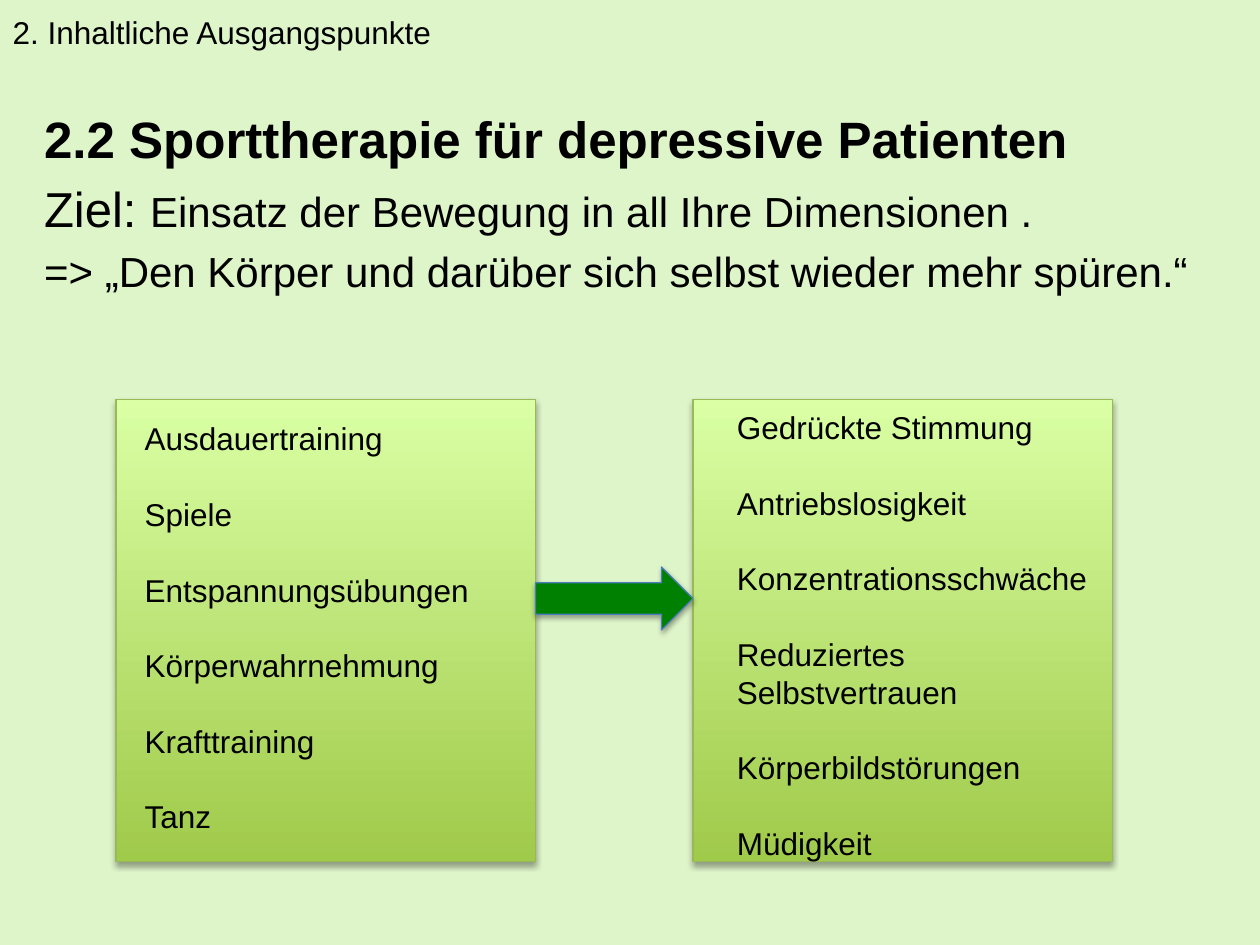
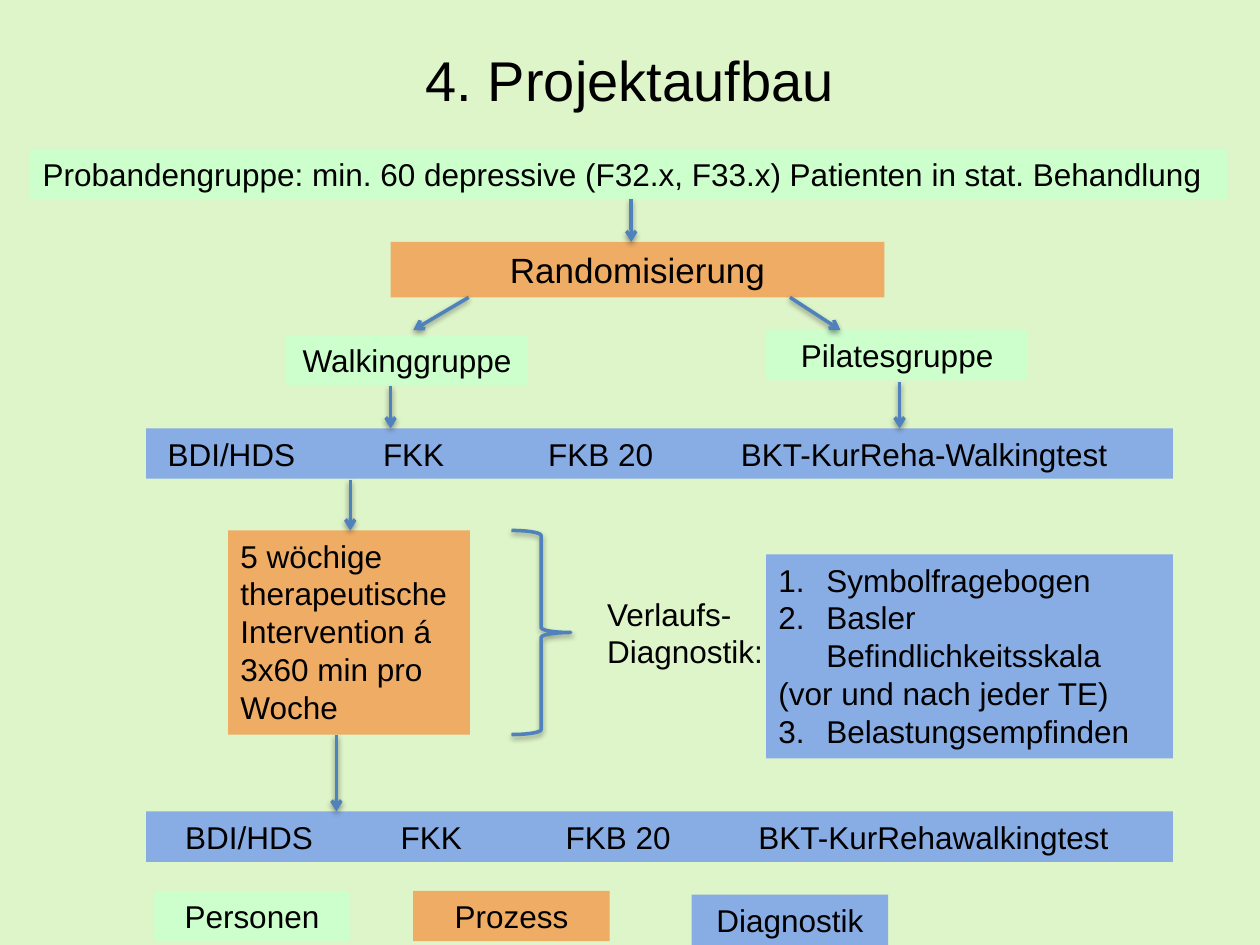
from lxml import etree
from pptx import Presentation
from pptx.dml.color import RGBColor
from pptx.enum.shapes import MSO_CONNECTOR, MSO_SHAPE
from pptx.enum.text import MSO_ANCHOR, MSO_AUTO_SIZE, PP_ALIGN
from pptx.oxml.ns import qn
from pptx.util import Inches, Pt

RECTANGLE = MSO_SHAPE.RECTANGLE
RIGHT_ARROW = MSO_SHAPE.RIGHT_ARROW
RIGHT_BRACE = MSO_SHAPE.RIGHT_BRACE
STRAIGHT = MSO_CONNECTOR.STRAIGHT
LEFT, CENTER = PP_ALIGN.LEFT, PP_ALIGN.CENTER
TOP, MIDDLE = MSO_ANCHOR.TOP, MSO_ANCHOR.MIDDLE

FONT = "Arial"
BLACK = RGBColor(0x00, 0x00, 0x00)
BACKGROUND = RGBColor(0xDE, 0xF4, 0xC9)
PANEL_DARK = RGBColor(0xA0, 0xCA, 0x4A)
PANEL_LIGHT = RGBColor(0xDA, 0xFF, 0xA5)
PANEL_LINE = RGBColor(0x98, 0xB9, 0x55)
ARROW_GREEN = RGBColor(0x00, 0x80, 0x00)
ARROW_LINE = RGBColor(0x4B, 0x7E, 0xBC)
CONNECTOR_BLUE = RGBColor(0x4F, 0x81, 0xBD)

# Box kinds of the project plan: colour and opacity in percent
PEOPLE = (RGBColor(0xCC, 0xFF, 0xCC), 100)
PROCESS = (RGBColor(0xFF, 0x66, 0x00), 50)
DIAGNOSTICS = (RGBColor(0x33, 0x66, 0xFF), 50)

BOX_HEIGHT = 0.4
INSET = 0.1
HANGING = 0.38
TEST_TABS = (1.71, 3.02, 4.55)


def format_runs(paragraph, size, bold=False):
    for run in paragraph.runs:
        run.font.name = FONT
        run.font.size = Pt(size)
        run.font.bold = bold
        run.font.color.rgb = BLACK


def write_lines(text_frame, lines, size=18, align=LEFT, gap=0):
    text_frame.word_wrap = True
    text_frame.vertical_anchor = TOP
    text_frame.text = "\n".join(lines)
    for paragraph in text_frame.paragraphs:
        paragraph.alignment = align
        paragraph.space_after = Pt(gap)
        format_runs(paragraph, size)


def place(shape, left, top, width, height):
    shape.left, shape.top = Inches(left), Inches(top)
    shape.width, shape.height = Inches(width), Inches(height)


def set_title(slide, text, position, size, align, anchor):
    title = slide.shapes.title
    place(title, *position)
    write_lines(title.text_frame, [text], size, align)
    title.text_frame.auto_size = MSO_AUTO_SIZE.NONE
    title.text_frame.vertical_anchor = anchor


def set_hanging(paragraph, bullet, **attributes):
    properties = paragraph._p.get_or_add_pPr()
    properties.set("marL", str(Inches(HANGING)))
    properties.set("indent", str(-Inches(HANGING)))
    etree.SubElement(properties, qn(bullet), **attributes)


def add_shape(slide, kind, left, top, width, height):
    return slide.shapes.add_shape(
        kind, Inches(left), Inches(top), Inches(width), Inches(height))


def add_text(slide, lines, left, top, width, height, gap=0):
    box = slide.shapes.add_textbox(
        Inches(left), Inches(top), Inches(width), Inches(height))
    write_lines(box.text_frame, lines, gap=gap)


def add_panel(slide, left):
    panel = add_shape(slide, RECTANGLE, left, 3.17, 3.33, 3.67)
    panel.fill.gradient()
    panel.fill.gradient_angle = 90
    for stop, color in zip(panel.fill.gradient_stops, (PANEL_DARK, PANEL_LIGHT)):
        stop.color.rgb = color
    panel.line.color.rgb = PANEL_LINE
    panel.line.width = Pt(0.75)


def add_box(slide, kind, lines, left, top, width, height=BOX_HEIGHT,
            size=18, align=CENTER):
    color, opacity = kind
    box = add_shape(slide, RECTANGLE, left, top, width, height)
    box.shadow.inherit = False
    box.fill.solid()
    box.fill.fore_color.rgb = color
    if opacity < 100:
        color_element = box.element.spPr.find(".//" + qn("a:srgbClr"))
        etree.SubElement(color_element, qn("a:alpha"), val=str(opacity * 1000))
    box.line.fill.background()
    write_lines(box.text_frame, lines, size, align)
    return box


def add_test_row(slide, top, offset, tests):
    row = add_box(slide, DIAGNOSTICS, ["\t".join(tests)], 1.16, top, 8.15, align=LEFT)
    row.text_frame.margin_left = Inches(INSET + offset)
    properties = row.text_frame.paragraphs[0]._p.get_or_add_pPr()
    tab_list = etree.SubElement(properties, qn("a:tabLst"))
    for position in TEST_TABS:
        etree.SubElement(tab_list, qn("a:tab"), pos=str(Inches(position)), algn="l")


def add_arrow(slide, x1, y1, x2, y2):
    arrow = slide.shapes.add_connector(
        STRAIGHT, Inches(x1), Inches(y1), Inches(x2), Inches(y2))
    arrow.line.color.rgb = CONNECTOR_BLUE
    arrow.line.width = Pt(2)
    line = arrow.element.spPr.find(qn("a:ln"))
    etree.SubElement(line, qn("a:tailEnd"), type="arrow")


def build_therapy_slide(presentation):
    slide = presentation.slides.add_slide(presentation.slide_layouts[1])
    set_title(slide, "2. Inhaltliche Ausgangspunkte", (0, 0.05, 6.58, 0.4), 18, LEFT, TOP)

    # Heading and aim
    body = slide.placeholders[1]
    place(body, 0.25, 0.8, 9.5, 5.92)
    text_frame = body.text_frame
    text_frame.auto_size = MSO_AUTO_SIZE.NONE
    text_frame.text = "\n".join((
        "2.2 Sporttherapie für depressive Patienten",
        "Ziel: ",
        "=> „Den Körper und darüber sich selbst wieder mehr spüren.“"))
    heading, aim, motto = text_frame.paragraphs
    aim.add_run().text = "Einsatz der Bewegung in all Ihre Dimensionen ."
    format_runs(heading, 29.2, bold=True)
    for paragraph in (aim, motto):
        format_runs(paragraph, 24)
    aim.runs[0].font.size = Pt(28)
    for paragraph in text_frame.paragraphs:
        set_hanging(paragraph, "a:buNone")

    # Therapy offers and the symptoms they act on
    add_panel(slide, 0.92)
    add_text(slide, ["Ausdauertraining", "Spiele", "Entspannungsübungen",
                     "Körperwahrnehmung", "Krafttraining", "Tanz"],
             1.05, 3.28, 3, 3.43, gap=21.6)
    add_panel(slide, 5.5)
    add_text(slide, ["Gedrückte Stimmung", "Antriebslosigkeit",
                     "Konzentrationsschwäche", "Reduziertes Selbstvertrauen",
                     "Körperbildstörungen", "Müdigkeit"],
             5.75, 3.19, 3.08, 3.74, gap=21.6)
    arrow = add_shape(slide, RIGHT_ARROW, 4.25, 4.5, 1.25, 0.5)
    arrow.fill.solid()
    arrow.fill.fore_color.rgb = ARROW_GREEN
    arrow.line.color.rgb = ARROW_LINE
    arrow.line.width = Pt(0.75)


def build_project_slide(presentation):
    slide = presentation.slides.add_slide(presentation.slide_layouts[5])
    set_title(slide, "4. Projektaufbau", (0.5, 0, 9, 1.25), 32, CENTER, MIDDLE)

    # Participants and groups
    add_box(slide, PEOPLE,
            ["Probandengruppe: min. 60 depressive (F32.x, F33.x) Patienten in stat. Behandlung"],
            0.24, 1.18, 9.5, align=LEFT)
    add_box(slide, PROCESS, ["Randomisierung"], 3.1, 1.92, 3.92, 0.44, size=20)
    add_box(slide, PEOPLE, ["Walkinggruppe"], 2.27, 2.66, 1.92)
    add_box(slide, PEOPLE, ["Pilatesgruppe"], 6.08, 2.62, 2.08)

    # Tests before and after the intervention
    tests = ("BDI/HDS", "FKK", "FKB 20")
    add_test_row(slide, 3.4, 0.07, tests + ("BKT-KurReha-Walkingtest",))
    add_test_row(slide, 6.44, 0.21, tests + ("BKT-KurRehawalkingtest",))

    # Intervention with accompanying diagnostics
    add_box(slide, PROCESS, ["5 wöchige therapeutische Intervention á 3x60 min pro Woche"],
            1.81, 4.21, 1.92, 1.62, align=LEFT)
    brace = add_shape(slide, RIGHT_BRACE, 4.06, 4.21, 0.47, 1.62)
    brace.fill.background()
    brace.line.color.rgb = CONNECTOR_BLUE
    brace.line.width = Pt(2)
    add_text(slide, ["Verlaufs-", "Diagnostik:"], 4.72, 4.67, 1.55, 0.71)
    course = add_box(slide, DIAGNOSTICS,
                     ["Symbolfragebogen", "Basler Befindlichkeitsskala",
                      "(vor und nach jeder TE)", "Belastungsempfinden"],
                     6.08, 4.4, 3.23, 1.62, align=LEFT)
    first, second, note, third = course.text_frame.paragraphs
    for paragraph in (first, second):
        set_hanging(paragraph, "a:buAutoNum", type="arabicPeriod")
    set_hanging(note, "a:buNone")
    set_hanging(third, "a:buAutoNum", type="arabicPeriod", startAt="3")

    # Legend
    for kind, label, left, top in ((PEOPLE, "Personen", 1.22, 7.07),
                                   (PROCESS, "Prozess", 3.28, 7.07),
                                   (DIAGNOSTICS, "Diagnostik", 5.49, 7.1)):
        add_box(slide, kind, [label], left, top, 1.56)

    # Flow
    for ends in ((5.01, 1.58, 5.01, 1.92), (3.72, 2.36, 3.28, 2.62),
                 (6.27, 2.36, 6.67, 2.62), (3.1, 3.06, 3.1, 3.4),
                 (7.14, 3.03, 7.14, 3.4), (2.78, 3.81, 2.78, 4.21),
                 (2.67, 5.83, 2.67, 6.44)):
        add_arrow(slide, *ends)


def main():
    presentation = Presentation()
    presentation.slide_width = Inches(10)
    presentation.slide_height = Inches(7.5)
    background = presentation.slide_master.background.fill
    background.solid()
    background.fore_color.rgb = BACKGROUND
    build_therapy_slide(presentation)
    build_project_slide(presentation)
    presentation.save("out.pptx")


if __name__ == "__main__":
    main()
